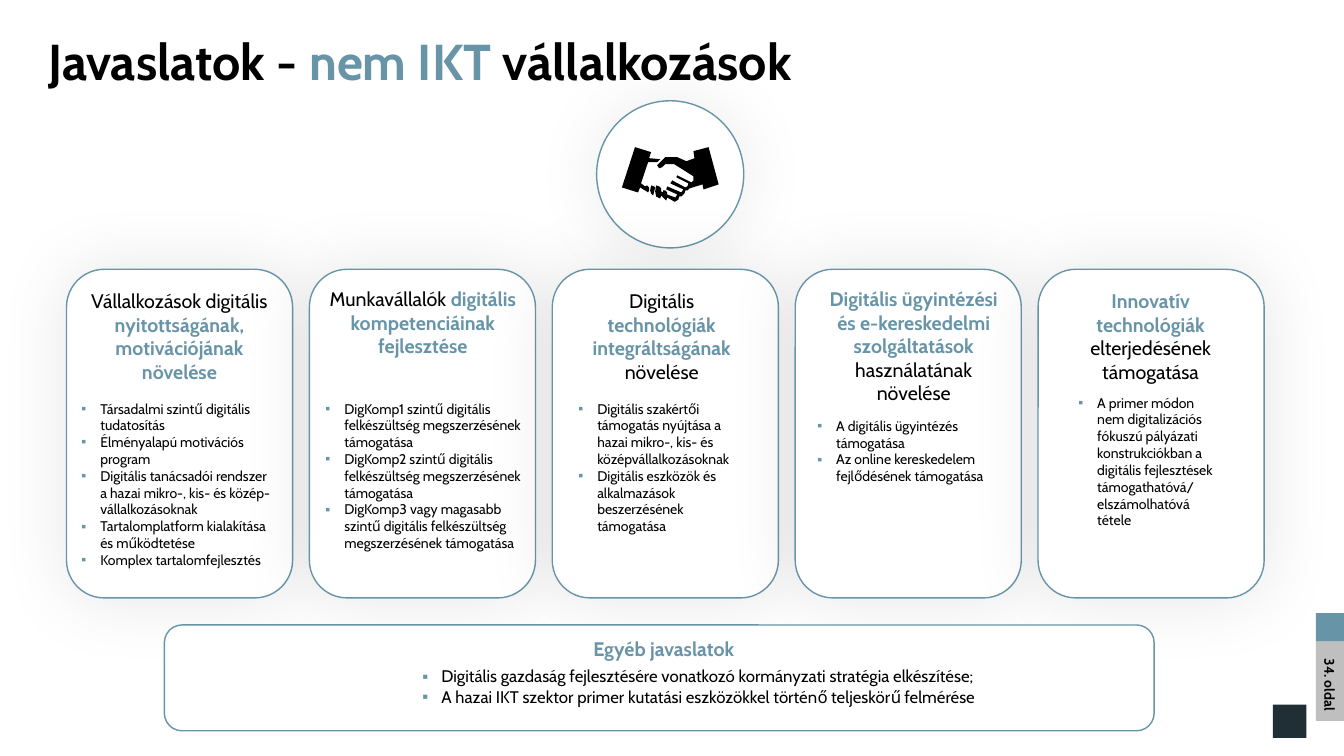
import lxml.etree
import pptx
import pptx.dml.color
import pptx.enum.shapes
import pptx.enum.text
import pptx.oxml.ns
import pptx.util

Pt = pptx.util.Pt
RGBColor = pptx.dml.color.RGBColor
MSO = pptx.enum.shapes.MSO_SHAPE
ALIGN = pptx.enum.text.PP_ALIGN
qn = pptx.oxml.ns.qn

BLACK = RGBColor(0x00, 0x00, 0x00)
WHITE = RGBColor(0xFF, 0xFF, 0xFF)
BLUE = RGBColor(0x68, 0x94, 0xA8)
GRAY = RGBColor(0xBF, 0xBF, 0xBF)
DARK = RGBColor(0x1F, 0x2F, 0x35)

CARDS = [
    ((53.3, 203, 149.8, 92.2),
     [("Vállalkozások digitális ", False),
      ("nyitottságának, motivációjának növelése", True)],
     (51.1, 282.2, 152.6, 140.4),
     ["Társadalmi szintű digitális tudatosítás",
      "Élményalapú motivációs program",
      "Digitális tanácsadói rendszer a hazai mikro-, kis- és közép-vállalkozásoknak",
      "Tartalomplatform kialakítása és működtetése",
      "Komplex tartalomfejlesztés"]),
    ((226.1, 201.6, 151.9, 74.9),
     [("Munkavállalók ", False),
      ("digitális kompetenciáinak fejlesztése", True)],
     (225.4, 282.2, 159.8, 116.6),
     ["DigKomp1 szintű digitális felkészültség megszerzésének támogatása",
      "DigKomp2 szintű digitális felkészültség megszerzésének támogatása",
      "DigKomp3 vagy magasabb szintű digitális felkészültség megszerzésének támogatása"]),
    ((409, 203, 127.4, 74.9),
     [("Digitális ", False),
      ("technológiák integráltságának ", True),
      ("növelése", False)],
     (406.1, 282.2, 139.7, 104.4),
     ["Digitális szakértői támogatás nyújtása a hazai mikro-, kis- és középvállalkozásoknak",
      "Digitális eszközök és alkalmazások beszerzésének támogatása"]),
    ((583.2, 201.6, 139, 92.2),
     [("Digitális ügyintézési és e-kereskedelmi szolgáltatások ", True),
      ("használatának növelése", False)],
     (576.7, 294.5, 144.7, 55.4),
     ["A digitális ügyintézés támogatása",
      "Az online kereskedelem fejlődésének támogatása"]),
    ((766.8, 203, 110.2, 74.9),
     [("Innovatív technológiák ", True),
      ("elterjedésének támogatása", False)],
     (763.2, 277.9, 117.4, 104.4),
     ["A primer módon nem digitalizációs fókuszú pályázati konstrukciókban "
      "a digitális fejlesztések támogathatóvá/ elszámolhatóvá tétele"]),
]

OTHER = [
    "Digitális gazdaság fejlesztésére vonatkozó kormányzati stratégia elkészítése;",
    "A hazai IKT szektor primer kutatási eszközökkel történő teljeskörű felmérése",
]

CUFF = [(630, 146), (646, 151), (644, 157), (655, 158), (652, 161), (643, 161),
        (636, 182), (640, 185), (642, 184), (644, 186), (644, 189), (643, 191),
        (640, 189), (635, 186), (633, 191), (617, 186)]
HAND = [(688, 150), (689, 157), (681, 160), (672, 156), (660, 156), (652, 164),
        (654, 167), (657, 166), (660, 163), (669, 163), (688, 175), (688, 179),
        (686, 181), (672, 174), (671, 176), (683, 182), (682, 185), (680, 186),
        (667, 179), (665, 182), (678, 188), (676, 191), (662, 185), (661, 188),
        (672, 193), (670, 196), (662, 193), (662, 191), (660, 189), (658, 189),
        (658, 191), (656, 190), (656, 187), (654, 185), (651, 184), (650, 190),
        (651, 195), (655, 197), (656, 194), (657, 195), (658, 196), (661, 199),
        (662, 196), (669, 200), (670, 200), (673, 198), (674, 195), (676, 195),
        (679, 192), (680, 189), (682, 189), (684, 187), (697, 183), (698, 188),
        (713, 183), (703, 146)]
THUMB = [(646, 184), (645, 189), (646, 192), (648, 194), (650, 186), (649, 185)]


class Deck:
    font = "Cabin"

    def __init__(self, slide):
        self.slide = slide

    def paint(self, shape, fill, line=None):
        shape.shadow.inherit = False
        shape.fill.solid()
        shape.fill.fore_color.rgb = fill
        if line is None:
            shape.line.fill.background()
        else:
            shape.line.color.rgb = line
            shape.line.width = Pt(1)

    def shape(self, kind, box, fill, line=None):
        shape = self.slide.shapes.add_shape(kind, *map(Pt, box))
        self.paint(shape, fill, line)
        return shape

    def glow(self, shape, blur, alpha):
        list_ = shape.element.spPr.find(qn("a:effectLst"))
        shade = lxml.etree.SubElement(
            list_, qn("a:outerShdw"), blurRad=str(Pt(blur)), dist="0", dir="0",
            algn="ctr", rotWithShape="0")
        tint = lxml.etree.SubElement(shade, qn("a:srgbClr"), val=str(BLACK))
        lxml.etree.SubElement(tint, qn("a:alpha"), val=str(alpha * 1000))

    def icon(self, parts):
        first, *rest = parts
        pen = self.slide.shapes.build_freeform(*first[0], scale=Pt(0.72))
        pen.add_line_segments(first[1:], close=True)
        for part in rest:
            pen.move_to(*part[0])
            pen.add_line_segments(part[1:], close=True)
        self.paint(pen.convert_to_shape(), BLACK)

    def style(self, run, size, color, bold):
        run.font.name = self.font
        run.font.size = Pt(size)
        run.font.color.rgb = color
        run.font.bold = bold

    def frame(self, box, grow=True):
        frame = self.slide.shapes.add_textbox(*map(Pt, box)).text_frame
        frame.word_wrap = True
        if grow:
            frame.auto_size = pptx.enum.text.MSO_AUTO_SIZE.SHAPE_TO_FIT_TEXT
        return frame

    def head(self, box, parts, size=14, align=ALIGN.CENTER, bold=False, grow=True):
        para = self.frame(box, grow).paragraphs[0]
        para.alignment = align
        for text, key in parts:
            run = para.add_run()
            run.text = text
            self.style(run, size, BLUE if key else BLACK, bold or key)
        return para

    def bullets(self, box, items, size=10, left=13.5):
        frame = self.frame(box)
        frame.text = "\n".join(items)
        for para in frame.paragraphs:
            prop = para._p.get_or_add_pPr()
            prop.set("marL", str(Pt(left)))
            prop.set("indent", str(-Pt(13.5)))
            tint = lxml.etree.SubElement(prop, qn("a:buClr"))
            lxml.etree.SubElement(tint, qn("a:srgbClr"), val=str(BLUE))
            lxml.etree.SubElement(prop, qn("a:buFont"), typeface="Arial")
            lxml.etree.SubElement(prop, qn("a:buChar"), char="▪")
            self.style(para.runs[0], size, BLACK, False)

    def tab(self, box, text):
        shape = self.shape(MSO.RECTANGLE, box, GRAY)
        frame = shape.text_frame
        frame.text = text
        frame.vertical_anchor = pptx.enum.text.MSO_ANCHOR.MIDDLE
        shape.element.txBody.bodyPr.set("vert", "vert")
        para = frame.paragraphs[0]
        para.alignment = ALIGN.RIGHT
        self.style(para.runs[0], 10, BLACK, True)


def main():
    show = pptx.Presentation()
    show.slide_width = Pt(960)
    show.slide_height = Pt(540)
    deck = Deck(show.slides.add_slide(show.slide_layouts[6]))

    deck.shape(MSO.RECTANGLE, (909.3, 503.3, 23.8, 23.8), DARK)
    title = deck.head(
        (27.4, 23, 699, 55.4),
        [("Javaslatok - ", False), ("nem IKT ", True), ("vállalkozások", False)],
        size=36, align=ALIGN.LEFT, bold=True, grow=False)
    title.line_spacing = 0.9

    disc = deck.shape(MSO.OVAL, (426.2, 72, 105.1, 105.1), WHITE, BLUE)
    deck.glow(disc, 49, 7)
    deck.icon([CUFF, HAND, THUMB])

    for i in range(len(CARDS)):
        card = deck.shape(MSO.ROUNDED_RECTANGLE,
                          (47.5 + 173.5 * i, 192.4, 161.5, 234.7), WHITE, BLUE)
        deck.glow(card, 52, 9)
    for place, parts, area, items in CARDS:
        deck.head(place, parts)
        deck.bullets(area, items)

    deck.shape(MSO.ROUNDED_RECTANGLE, (117.4, 446.4, 707, 75.6), WHITE, BLUE)
    deck.head((377.3, 451.4, 193.7, 24.5), [("Egyéb javaslatok", True)])
    deck.bullets((75.6, 472.3, 796.3, 36), OTHER, size=12, left=232.6)

    deck.tab((940, 458, 20, 56.9), "34. oldal")
    deck.shape(MSO.RECTANGLE, (940, 438, 20, 20), BLUE)
    show.save("out.pptx")


if __name__ == "__main__":
    main()
